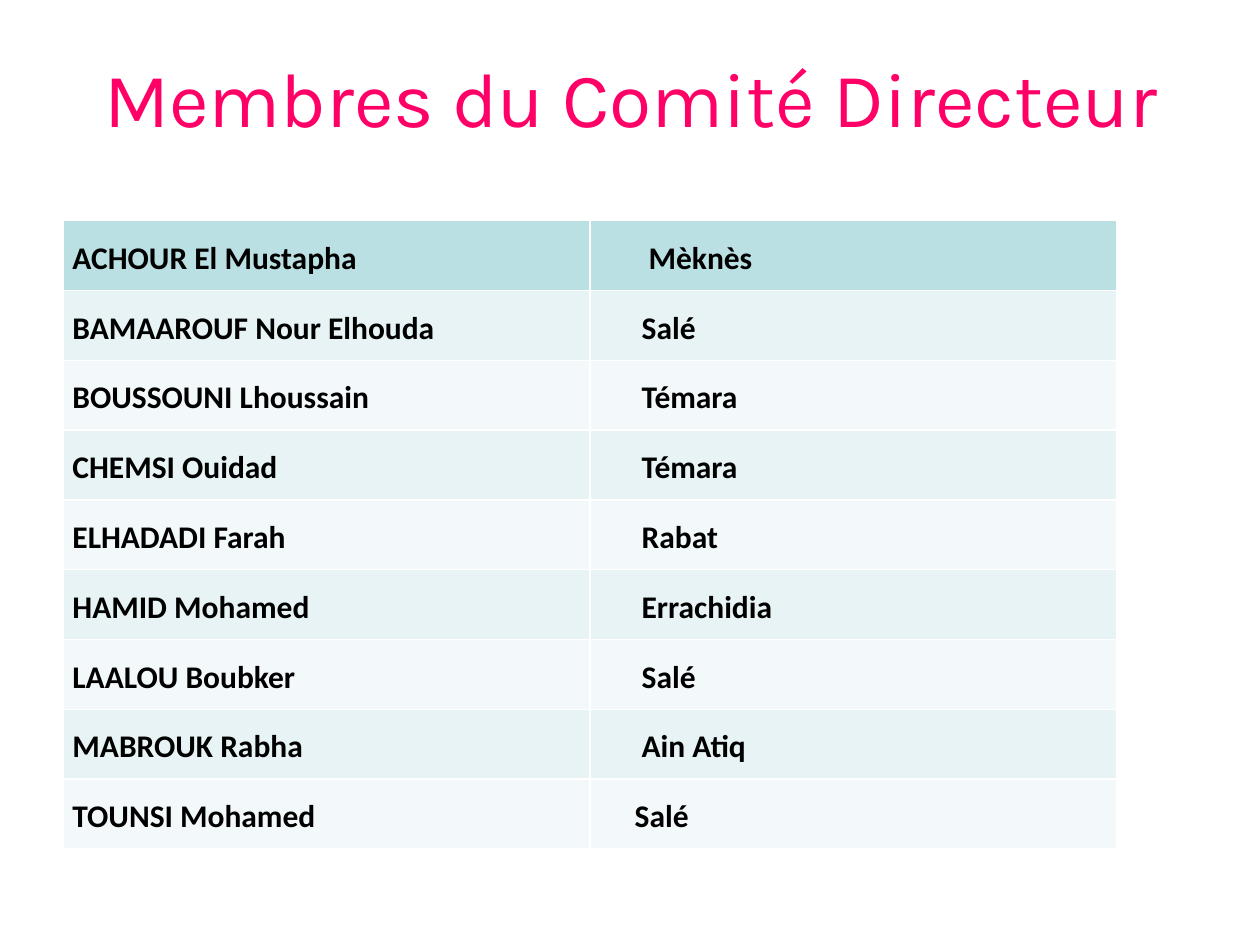
from lxml import etree
from pptx import Presentation
from pptx.dml.color import RGBColor
from pptx.enum import text as tx
from pptx.oxml import ns
from pptx.util import Cm, Pt

MEMBERS = [
    # name, town, left indent of the town in cm
    ("ACHOUR El Mustapha", "Mèknès", 1.18),
    ("BAMAAROUF Nour Elhouda", "Salé", 1.04),
    ("BOUSSOUNI Lhoussain", "Témara", 1.04),
    ("CHEMSI Ouidad", "Témara", 1.04),
    ("ELHADADI Farah", "Rabat", 1.04),
    ("HAMID Mohamed", "Errachidia", 1.04),
    ("LAALOU Boubker", "Salé", 1.04),
    ("MABROUK Rabha", "Ain Atiq", 1.04),
    ("TOUNSI Mohamed", "Salé", 0.9),
]
HEAD, BANDS = "BBE0E3", ("F3F9FA", "E7F3F4")


def color(code):
    return RGBColor.from_string(code)


def write(frame, words, font="Calibri", size=18, fill="000000", bold=False,
          align=None, space=None):
    par = frame.paragraphs[0]
    par.alignment = align
    par.line_spacing = space
    run = par.add_run()
    run.text = words
    run.font.name = font
    run.font.size = Pt(size)
    run.font.bold = bold
    run.font.color.rgb = color(fill)


def edge(cell, code="FFFFFF", width=1):
    # Borders come before the fill in the cell properties
    props = cell._tc.get_or_add_tcPr()
    for spot, side in enumerate(("lnL", "lnR", "lnT", "lnB")):
        line = etree.Element(ns.qn("a:" + side), w=str(Pt(width)))
        solid = etree.SubElement(line, ns.qn("a:solidFill"))
        etree.SubElement(solid, ns.qn("a:srgbClr"), val=code)
        props.insert(spot, line)


def heading(slide, left, top, width, height):
    title = slide.shapes.title
    title.left, title.top = Cm(left), Cm(top)
    title.width, title.height = Cm(width), Cm(height)
    frame = title.text_frame
    frame.word_wrap = True
    frame.vertical_anchor = tx.MSO_ANCHOR.MIDDLE
    write(frame, "Membres du Comité Directeur", font="Karla", size=44,
          fill="FF0066", align=tx.PP_ALIGN.CENTER)


def roster(slide, left, top, width, height):
    table = slide.shapes.add_table(len(MEMBERS), 2, Cm(left), Cm(top),
                                   Cm(width), Cm(height)).table
    table.first_row = table.horz_banding = False
    for row, (name, town, indent) in enumerate(MEMBERS):
        shade = BANDS[row % 2] if row else HEAD
        for col, (words, inset) in enumerate(((name, 0.18), (town, indent))):
            cell = table.cell(row, col)
            cell.margin_left, cell.margin_right = Cm(inset), Cm(0.18)
            cell.margin_top = cell.margin_bottom = 0
            cell.vertical_anchor = tx.MSO_ANCHOR.MIDDLE
            cell.fill.solid()
            cell.fill.fore_color.rgb = color(shade)
            edge(cell)
            write(cell.text_frame, words, bold=True, space=1.15)


def main():
    deck = Presentation()
    deck.slide_width, deck.slide_height = Cm(25.4), Cm(19.05)
    slide = deck.slides.add_slide(deck.slide_layouts[5])
    heading(slide, 1.3, -0.05, 22.86, 3.99)
    roster(slide, 1.28, 4.45, 21.23, 12.67)
    deck.save("out.pptx")


if __name__ == "__main__":
    main()
